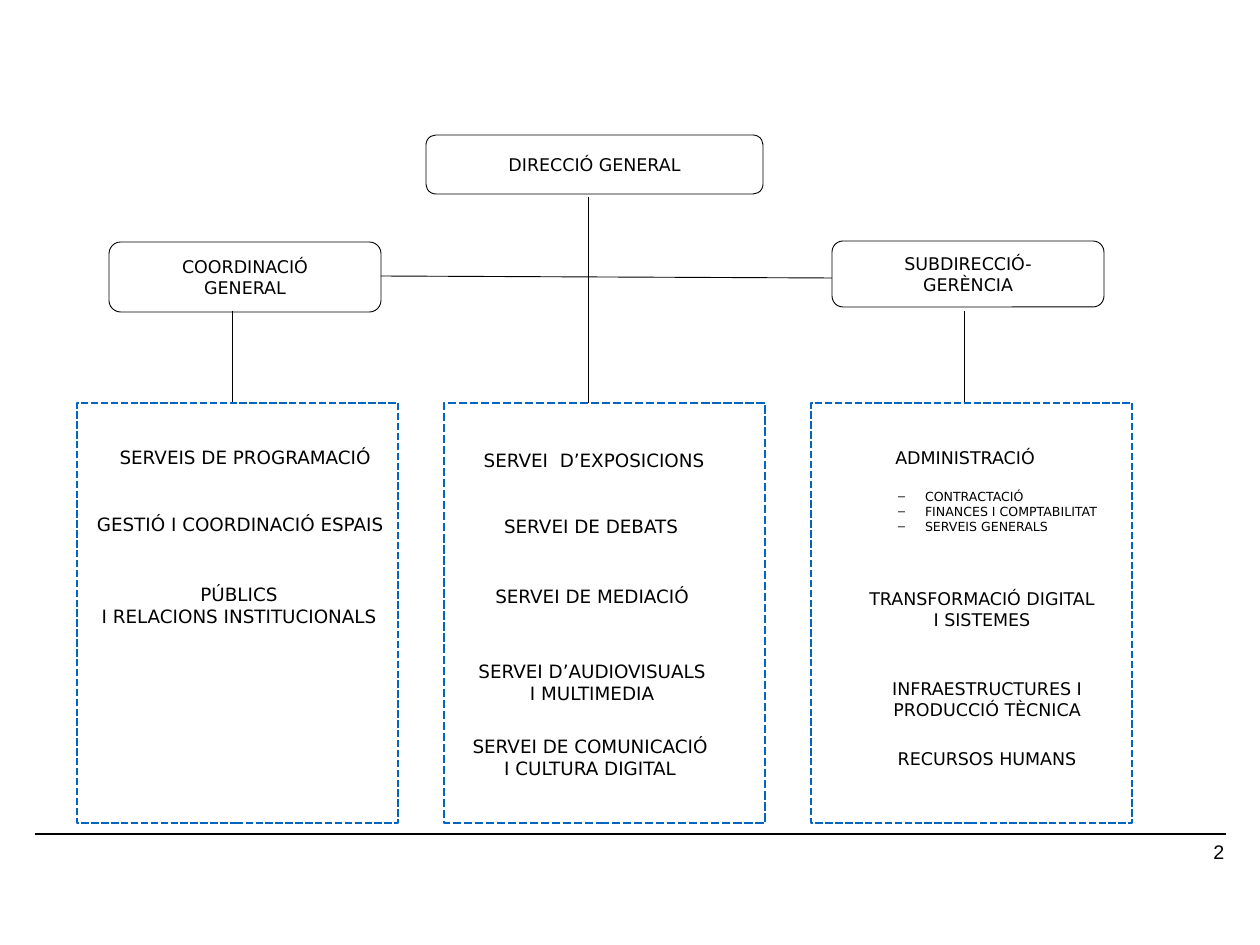
import pptx
import pptx.dml.color
import pptx.enum.dml
import pptx.enum.shapes
import pptx.enum.text
import pptx.oxml.ns
import pptx.util
from lxml import etree

SCALE = 10320
SHAPE = pptx.enum.shapes.MSO_SHAPE
ALIGN = pptx.enum.text.PP_ALIGN
ANCHOR = pptx.enum.text.MSO_ANCHOR
FONT = "DejaVu Sans"
BLACK = "000000"
BLUE = "0365C0"
FRAME = dict(margin_left=0, margin_top=0, margin_right=0, margin_bottom=0,
             vertical_anchor=ANCHOR.MIDDLE, word_wrap=True,
             auto_size=pptx.enum.text.MSO_AUTO_SIZE.NONE)

OFFICES = [
    ((426, 135, 337, 59), ["DIRECCIÓ GENERAL"]),
    ((109, 242, 272, 70), ["COORDINACIÓ", "GENERAL"]),
    ((832, 241, 272, 66), ["SUBDIRECCIÓ-", "GERÈNCIA"]),
]
LINKS = [
    (381, 276, 832, 278),
    (232, 311, 232, 403),
    (588, 197, 588, 403),
    (964, 311, 964, 403),
]
SERVICES = [
    (14.9, [
        (245, 457, ["SERVEIS DE PROGRAMACIÓ"]),
        (240, 524, ["GESTIÓ I COORDINACIÓ ESPAIS"]),
        (239, 605, ["PÚBLICS", "I RELACIONS INSTITUCIONALS"]),
    ]),
    (14.9, [
        (594, 460, ["SERVEI  D’EXPOSICIONS"]),
        (591, 526, ["SERVEI DE DEBATS"]),
        (592, 596, ["SERVEI DE MEDIACIÓ"]),
        (592, 682, ["SERVEI D’AUDIOVISUALS", "I MULTIMEDIA"]),
        (590, 757, ["SERVEI DE COMUNICACIÓ", "I CULTURA DIGITAL"]),
    ]),
    (14.2, [
        (982, 609, ["TRANSFORMACIÓ DIGITAL", "I SISTEMES"]),
        (987, 699, ["INFRAESTRUCTURES I", "PRODUCCIÓ TÈCNICA"]),
        (987, 758, ["RECURSOS HUMANS"]),
    ]),
]
UNITS = ["CONTRACTACIÓ", "FINANCES I COMPTABILITAT", "SERVEIS GENERALS"]


def px(*lengths):
    """Turn pixel lengths into EMU."""
    return [pptx.util.Emu(n * SCALE) for n in lengths]


def rgb(code):
    """Turn a hex string into a colour."""
    return pptx.dml.color.RGBColor.from_string(code)


def apply(obj, values):
    """Set every attribute named in a dict of format values."""
    for name, value in values.items():
        setattr(obj, name, value)


def stroke(line, color, width, dash=None):
    """Format an outline or a connector."""
    line.color.rgb = rgb(color)
    apply(line, dict(width=pptx.util.Pt(width), dash_style=dash))


def write(p, text, size, align, font=FONT):
    """Write one formatted run into a paragraph."""
    p.alignment = align
    r = p.add_run()
    r.text = text
    apply(r.font, dict(name=font, size=pptx.util.Pt(size), bold=False))
    r.font.color.rgb = rgb(BLACK)


def add_box(s, kind, frame, lines=(), size=14.2):
    """Add an unfilled shape with centred lines of text."""
    sp = s.shapes.add_shape(kind, *px(*frame))
    sp.shadow.inherit = False
    sp.fill.background()
    sp.line.fill.background()
    tf = sp.text_frame
    apply(tf, FRAME)
    for i, text in enumerate(lines):
        write(tf.add_paragraph() if i else tf.paragraphs[0], text, size, ALIGN.CENTER)
    return sp


def add_line(s, ends, width):
    """Add a straight black connector."""
    sp = s.shapes.add_connector(pptx.enum.shapes.MSO_CONNECTOR.STRAIGHT, *px(*ends))
    stroke(sp.line, BLACK, width)
    etree.SubElement(sp._element.spPr, pptx.oxml.ns.qn("a:effectLst"))


def set_bullet(p, char, left, hanging):
    """Give a paragraph its indents and a bullet, or none."""
    pPr = p._p.get_or_add_pPr()
    for name, length in (("marL", left), ("indent", -hanging)):
        pPr.set(name, str(px(length)[0]))
    tag = "a:buChar" if char else "a:buNone"
    bullet = etree.SubElement(pPr, pptx.oxml.ns.qn(tag))
    if char:
        bullet.set("char", char)


def add_list(sp, frame, heading, items):
    """Fill the body placeholder with a heading and a dashed list."""
    apply(sp, dict(zip(("left", "top", "width", "height"), px(*frame))))
    tf = sp.text_frame
    apply(tf, FRAME)
    p = tf.paragraphs[0]
    set_bullet(p, None, 0, 0)
    p.space_before = pptx.util.Pt(0)
    write(p, heading, 14.2, ALIGN.CENTER)
    for i, text in enumerate(items):
        p = tf.add_paragraph()
        p.level = 1
        set_bullet(p, "–", 99, 27)
        p.space_before = pptx.util.Pt(0 if i else 17)
        write(p, text, 10.2, ALIGN.LEFT)


def add_page_number(s, frame, text):
    """Add the right-aligned page number."""
    tf = s.shapes.add_textbox(*px(*frame)).text_frame
    tf.word_wrap = True
    write(tf.paragraphs[0], text, 16, ALIGN.RIGHT, "Arial")


def main():
    """Build the organisation chart."""
    prs = pptx.Presentation()
    apply(prs, dict(zip(("slide_width", "slide_height"), px(1260, 945))))
    s = prs.slides.add_slide(prs.slide_layouts[1])
    title = s.shapes.title._element
    title.getparent().remove(title)
    add_line(s, (35, 834, 1226, 834), 1)
    for ends in LINKS:
        add_line(s, ends, 0.75)
    for frame, lines in OFFICES:
        sp = add_box(s, SHAPE.ROUNDED_RECTANGLE, frame, lines)
        stroke(sp.line, BLACK, 0.75)
    for i, (size, services) in enumerate(SERVICES):
        sp = add_box(s, SHAPE.RECTANGLE, (77 + 367 * i, 403, 321, 420))
        stroke(sp.line, BLUE, 2.25 if i == 1 else 2,
               pptx.enum.dml.MSO_LINE.SQUARE_DOT)
        for x, y, lines in services:
            add_box(s, SHAPE.ROUNDED_RECTANGLE, (x - 150, y - 25, 300, 50), lines, size)
    add_list(s.placeholders[1], (826, 428, 278, 125), "ADMINISTRACIÓ", UNITS)
    add_page_number(s, (939, 836, 294, 36), "2")
    prs.save("out.pptx")


if __name__ == "__main__":
    main()
